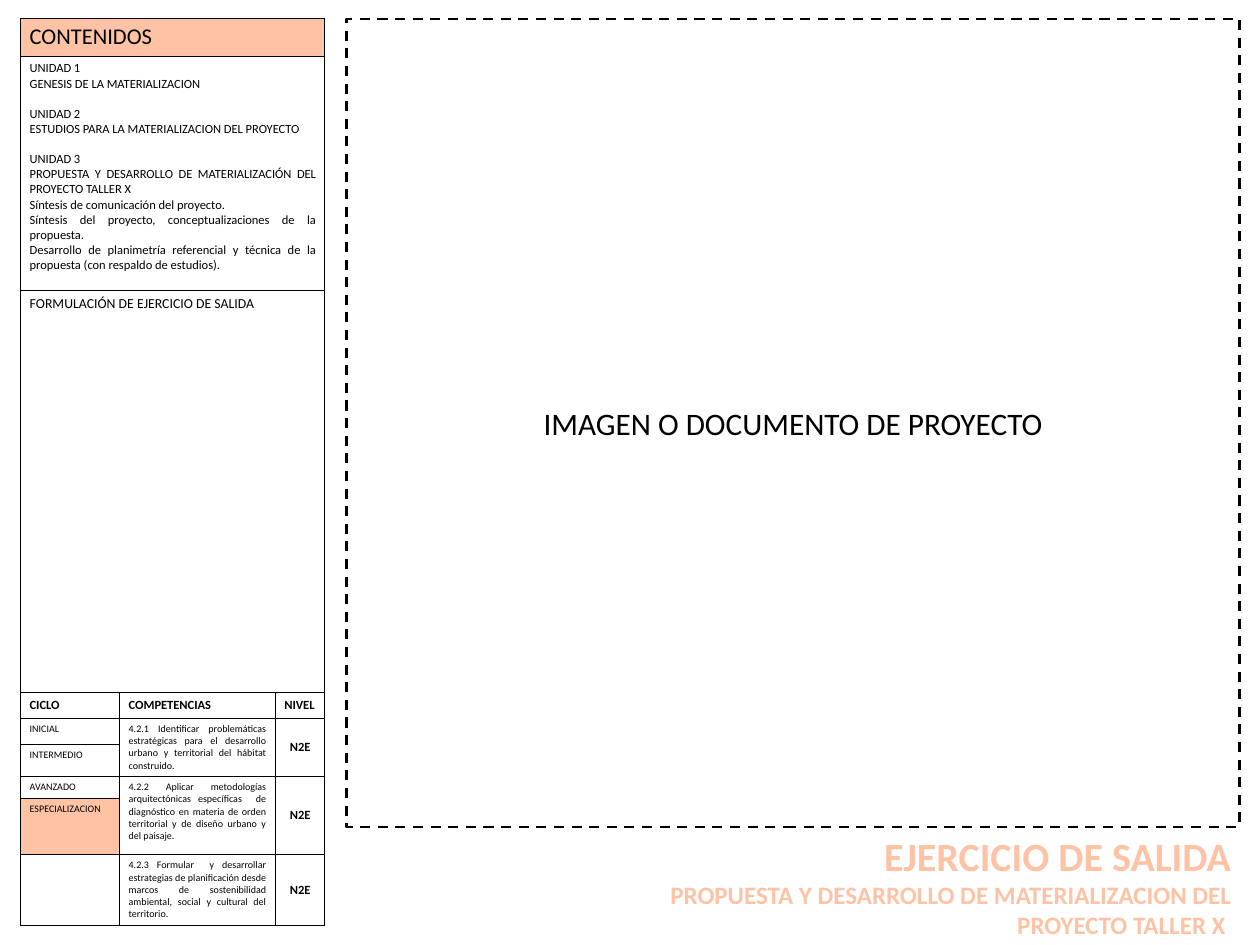
from lxml.etree import SubElement
from pptx import Presentation
from pptx.dml.color import RGBColor
from pptx.enum.dml import MSO_LINE
from pptx.enum.shapes import MSO_SHAPE
from pptx.enum.text import MSO_ANCHOR, PP_ALIGN
from pptx.oxml.ns import qn
from pptx.util import Inches, Pt

COLORS = {"ink": "000000", "peach": "FDC3A4"}
FONT = "Calibri"
WIDTH, HEIGHT = 14, 10.5
MARGIN, TOP = 0.23, 0.21
COLUMNS = [1.1, 1.73, 0.55]
ROWS = [0.42, 2.6, 4.47, 0.28, 0.29, 0.34, 0.24, 0.63, 0.77]

UNITS = [
    ["UNIDAD 1", "GENESIS DE LA MATERIALIZACION"],
    ["UNIDAD 2", "ESTUDIOS PARA LA MATERIALIZACION DEL PROYECTO"],
    ["UNIDAD 3",
     "PROPUESTA Y DESARROLLO DE MATERIALIZACIÓN DEL PROYECTO TALLER X",
     "Síntesis de comunicación del proyecto.",
     "Síntesis del proyecto, conceptualizaciones de la propuesta.",
     "Desarrollo de planimetría referencial y técnica de la propuesta (con respaldo de estudios)."],
]
BANNERS = [("CONTENIDOS", 18), ("\n".join(line for unit in UNITS for line in unit), 10),
           ("FORMULACIÓN DE EJERCICIO DE SALIDA", 11)]
HEADINGS = ["CICLO", "COMPETENCIAS", "NIVEL"]
CYCLES = ["INICIAL", "INTERMEDIO", "AVANZADO", "ESPECIALIZACION"]
SKILLS = [
    (4, 2, "4.2.1 Identificar problemáticas estratégicas para el desarrollo urbano y territorial del hábitat construido. ", "N2E"),
    (6, 2, "4.2.2 Aplicar metodologías arquitectónicas específicas  de diagnóstico en materia de orden territorial y de diseño urbano y del paisaje.", "N2E"),
    (8, 1, "4.2.3 Formular  y desarrollar estrategias de planificación desde marcos de sostenibilidad ambiental, social y cultural del territorio.", "N2E"),
]
HIGHLIGHTS = [(0, 0), (7, 0)]
PROJECT_AREA = "IMAGEN O DOCUMENTO DE PROYECTO"
TITLE = [("EJERCICIO DE SALIDA", 32),
         ("PROPUESTA Y DESARROLLO DE MATERIALIZACION DEL PROYECTO TALLER X ", 20)]


def color(name):
    return RGBColor.from_string(COLORS[name])


def style(paragraph, size, align, bold=False, ink="ink"):
    paragraph.alignment = align
    for run in paragraph.runs:
        run.font.name, run.font.size, run.font.bold = FONT, Pt(size), bold
        run.font.color.rgb = color(ink)


def write(cell, text, size, align=PP_ALIGN.JUSTIFY, bold=False):
    cell.text_frame.text = text
    for paragraph in cell.text_frame.paragraphs:
        style(paragraph, size, align, bold)


def draw_borders(cell, row, column):
    cycle = column == 0 and row >= 4
    thin = {"T": row == 2 or cycle and row > 4, "B": row == 1 or cycle}
    for side in "LRTB":
        line = SubElement(cell._tc.get_or_add_tcPr(), qn("a:ln" + side),
                          w=str(Pt(0.5 if thin.get(side) else 1)))
        SubElement(SubElement(line, qn("a:solidFill")), qn("a:srgbClr"), val=COLORS["ink"])


def build_contents(slide):
    table = slide.shapes.add_table(len(ROWS), len(COLUMNS), Inches(MARGIN), Inches(TOP),
                                   Inches(sum(COLUMNS)), Inches(sum(ROWS))).table
    table.first_row = table.horz_banding = False
    for column, width in zip(table.columns, COLUMNS):
        column.width = Inches(width)
    for row, height in zip(table.rows, ROWS):
        row.height = Inches(height)
    for r in range(len(ROWS)):
        for c in range(len(COLUMNS)):
            cell = table.cell(r, c)
            draw_borders(cell, r, c)
            if (r, c) in HIGHLIGHTS:
                cell.fill.solid()
                cell.fill.fore_color.rgb = color("peach")
            else:
                cell.fill.background()
    for r, (text, size) in enumerate(BANNERS):
        table.cell(r, 0).merge(table.cell(r, 2))
        write(table.cell(r, 0), text, size)
    for paragraph in table.cell(1, 0).text_frame.paragraphs:
        if paragraph.text in [unit[0] for unit in UNITS[1:]]:
            paragraph.space_before = Pt(12)
    for c, heading in enumerate(HEADINGS):
        write(table.cell(3, c), heading, 10, bold=True)
    for r, cycle in enumerate(CYCLES, 4):
        write(table.cell(r, 0), cycle, 8)
    for r, span, skill, level in SKILLS:
        for c in (1, 2):
            if span > 1:
                table.cell(r, c).merge(table.cell(r + span - 1, c))
        write(table.cell(r, 1), skill, 8)
        write(table.cell(r, 2), level, 10, PP_ALIGN.CENTER, True)
        table.cell(r, 2).vertical_anchor = MSO_ANCHOR.MIDDLE


def build_title(slide):
    title = slide.shapes.add_textbox(Inches(WIDTH / 2), Inches(9.19), Inches(6.78), Inches(1.31))
    title.text_frame.word_wrap = True
    title.text_frame.text = "\n".join(text for text, _ in TITLE)
    for paragraph, (_, size) in zip(title.text_frame.paragraphs, TITLE):
        style(paragraph, size, PP_ALIGN.RIGHT, True, "peach")


def build_project_area(slide):
    left = 3.85
    area = slide.shapes.add_shape(MSO_SHAPE.RECTANGLE, Inches(left), Inches(TOP),
                                  Inches(WIDTH - MARGIN - left), Inches(8.98))
    area.shadow.inherit = False
    area.fill.background()
    area.line.color.rgb = color("ink")
    area.line.width = Pt(2)
    area.line.dash_style = MSO_LINE.DASH
    area.text_frame.text = PROJECT_AREA
    area.text_frame.vertical_anchor = MSO_ANCHOR.MIDDLE
    style(area.text_frame.paragraphs[0], 25, PP_ALIGN.CENTER)


def main():
    deck = Presentation()
    deck.slide_width, deck.slide_height = Inches(WIDTH), Inches(HEIGHT)
    slide = deck.slides.add_slide(deck.slide_layouts[6])
    build_contents(slide)
    build_title(slide)
    build_project_area(slide)
    deck.save("out.pptx")


if __name__ == "__main__":
    main()
